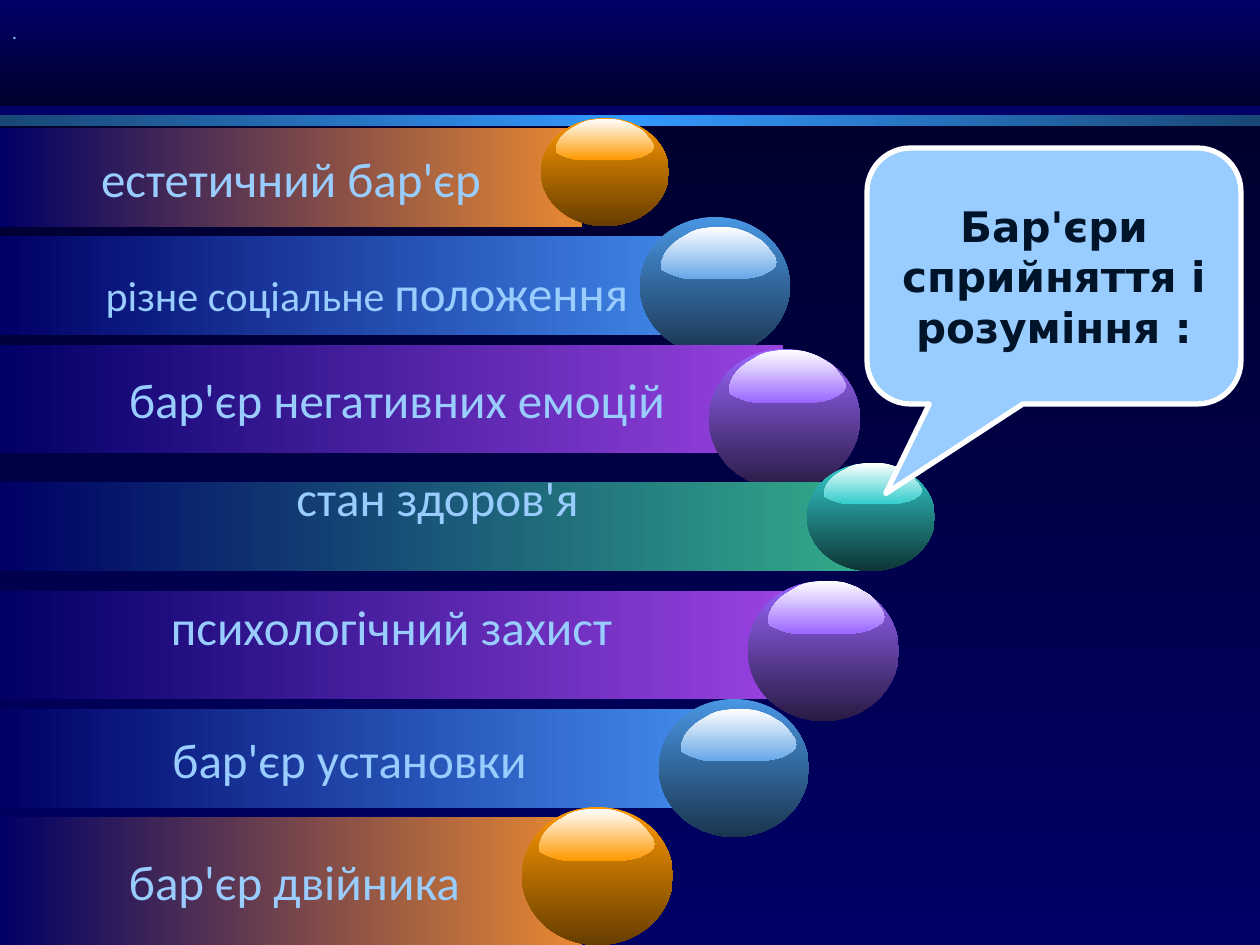
from copy import deepcopy

from pptx import Presentation
from pptx.dml.color import RGBColor
from pptx.enum.shapes import MSO_SHAPE
from pptx.enum.text import MSO_ANCHOR, PP_ALIGN
from pptx.oxml.ns import qn
from pptx.util import Pt

SCALE = 914400 / 126  # EMU in one px
WIDTH, HEIGHT = 1260, 945
INSET_X, INSET_Y = 12, 6

COLORS = {
    "navy": "000066", "night": "00002F", "line": "3399FF", "line_end": "184776",
    "text": "99CCFF", "bubble": "99CCFF", "bubble_text": "001429", "white": "FFFFFF",
}
# bar end, orb top, orb bottom, gloss bottom
THEMES = {
    "orange": ("E98931", "FF9900", "663D00", "FF9900"),
    "blue": ("418AEB", "4996E3", "1A3550", "66A7E8"),
    "purple": ("9942E0", "9966FF", "281A42", "9966FF"),
    "teal": ("33AD8A", "33CCCC", "0D3535", "33CCCC"),
}

# theme, label, bar (top, width, height), orb box, gloss box,
# extra insets (left, bottom) that move the label off the bar's centre
BARRIERS = [
    ("orange", "естетичний бар'єр", (128, 582, 99),
     (541, 118, 128, 108), (556, 119, 98, 41), (0, 0)),
    ("blue", None, (236, 699, 99),
     (640, 217, 150, 138), (661, 227, 116, 52), (0, 0)),
    ("purple", "бар'єр негативних емоцій", (345, 783, 108),
     (709, 349, 151, 140), (729, 350, 117, 53), (11, 0)),
    ("teal", "стан здоров'я", (482, 875, 89),
     (807, 463, 128, 108), (824, 463, 98, 41), (0, 60)),
    ("purple", "психологічний захист", (591, 783, 108),
     (748, 581, 151, 140), (768, 581, 117, 53), (0, 38)),
    ("blue", "бар'єр установки", (709, 699, 99),
     (659, 699, 150, 138), (681, 709, 116, 52), (0, 0)),
    ("orange", "бар'єр двійника", (817, 582, 128),
     (522, 807, 151, 138), (539, 809, 116, 52), (7, 0)),
]
SOCIAL_LABEL = [("різне соціальне ", 24), ("положення", 28)]
BUBBLE_LABEL = "Бар'єри сприйняття і розуміння :"

GLOSS_SIZE = (92, 41)
GLOSS_OUTLINE = [
    (90, 23), (92, 28), (90, 32), (86, 35), (80, 38), (72, 40), (62, 41), (33, 41),
    (24, 41), (16, 40), (10, 38), (5, 36), (1, 34), (0, 30), (1, 26), (3, 21),
    (6, 17), (10, 13), (14, 10), (19, 7), (24, 4), (29, 2), (34, 1), (40, 0),
    (46, 0), (53, 0), (59, 1), (65, 3), (70, 5), (75, 8), (80, 11), (84, 15), (87, 19),
]

RIGHTWARD, DOWNWARD = 0, 270


def px(value):
    return round(value * SCALE)


def rgb(value):
    return RGBColor.from_string(value)


def paint(shape, colors, angle):
    """Fill with evenly spaced gradient colours and no outline."""
    shape.shadow.inherit = False
    shape.line.fill.background()
    shape.fill.gradient()
    shape.fill.gradient_angle = angle
    stop_list = shape._element.spPr.find(".//" + qn("a:gsLst"))
    for _ in colors[2:]:
        stop_list.append(deepcopy(stop_list[0]))
    for index, (stop, color) in enumerate(zip(shape.fill.gradient_stops, colors)):
        stop.position = index / (len(colors) - 1)
        stop.color.rgb = rgb(color)


def add_gradient(slide, preset, box, colors, angle):
    shape = slide.shapes.add_shape(preset, *map(px, box))
    paint(shape, colors, angle)
    return shape


def add_gloss(slide, box, colors):
    left, top, width, height = box
    points = [(px(left + x * width / GLOSS_SIZE[0]), px(top + y * height / GLOSS_SIZE[1]))
              for x, y in GLOSS_OUTLINE]
    builder = slide.shapes.build_freeform(*points[0])
    builder.add_line_segments(points[1:], close=True)
    paint(builder.convert_to_shape(), colors, DOWNWARD)


def write(shape, runs, align, anchor, wrap=False, color="text", font="Calibri",
          bold=False, shift=(0, 0)):
    """Write one paragraph of (text, size) runs; shift adds to left and bottom insets."""
    frame = shape.text_frame
    frame.word_wrap = wrap
    frame.vertical_anchor = anchor
    frame.margin_left, frame.margin_right = px(INSET_X + shift[0]), px(INSET_X)
    frame.margin_top, frame.margin_bottom = px(INSET_Y), px(INSET_Y + shift[1])
    paragraph = frame.paragraphs[0]
    paragraph.alignment = align
    paragraph.font.name = font
    paragraph.font.bold = bold
    paragraph.font.color.rgb = rgb(COLORS[color])
    for text, size in runs:
        run = paragraph.add_run()
        run.text = text
        run.font.size = Pt(size)


def add_backdrop(slide):
    navy, night = COLORS["navy"], COLORS["night"]
    slide.background.fill.solid()
    slide.background.fill.fore_color.rgb = rgb(navy)
    line = [COLORS["line_end"], COLORS["line"], COLORS["line_end"]]
    for box, colors, angle in [
        ((0, 0, WIDTH, 106), [navy, night], DOWNWARD),
        ((0, 125, WIDTH, HEIGHT - 125), [night, navy], DOWNWARD),
        ((0, 115, WIDTH, 11), line, RIGHTWARD),
    ]:
        add_gradient(slide, MSO_SHAPE.RECTANGLE, box, colors, angle)


def add_barrier(slide, theme, label, bar_box, orb_box, gloss_box, shift):
    bar_end, orb_top, orb_bottom, gloss_bottom = THEMES[theme]
    top, width, height = bar_box
    bar = add_gradient(slide, MSO_SHAPE.RECTANGLE, (0, top, width, height),
                       [COLORS["navy"], bar_end], RIGHTWARD)
    if label:
        write(bar, [(label, 28)], PP_ALIGN.CENTER, MSO_ANCHOR.MIDDLE, shift=shift)
    add_gradient(slide, MSO_SHAPE.OVAL, orb_box, [orb_top, orb_bottom], DOWNWARD)
    add_gloss(slide, gloss_box, [COLORS["white"], gloss_bottom])


def add_bubble(slide):
    bubble = slide.shapes.add_shape(MSO_SHAPE.ROUNDED_RECTANGULAR_CALLOUT,
                                    *map(px, (867, 148, 374, 256)))
    for index, value in enumerate((-0.45, 0.85, 0.17)):
        bubble.adjustments[index] = value
    bubble.shadow.inherit = False
    bubble.fill.solid()
    bubble.fill.fore_color.rgb = rgb(COLORS["bubble"])
    bubble.line.color.rgb = rgb(COLORS["white"])
    bubble.line.width = Pt(3)
    write(bubble, [(BUBBLE_LABEL, 24)], PP_ALIGN.CENTER, MSO_ANCHOR.MIDDLE, wrap=True,
          color="bubble_text", font="DejaVu Sans", bold=True)


def main():
    deck = Presentation()
    deck.slide_width, deck.slide_height = px(WIDTH), px(HEIGHT)
    slide = deck.slides.add_slide(deck.slide_layouts[6])
    add_backdrop(slide)
    for barrier in BARRIERS[:2]:
        add_barrier(slide, *barrier)
    social = slide.shapes.add_textbox(*map(px, (0, 256, 640, 72)))
    write(social, SOCIAL_LABEL, PP_ALIGN.RIGHT, MSO_ANCHOR.TOP, wrap=True)
    for barrier in BARRIERS[2:4]:
        add_barrier(slide, *barrier)
    add_bubble(slide)
    dot = slide.shapes.add_textbox(*map(px, (0, 14, 30, 36)))
    write(dot, [(".", 11)], PP_ALIGN.LEFT, MSO_ANCHOR.MIDDLE)
    for barrier in BARRIERS[4:]:
        add_barrier(slide, *barrier)
    deck.save("out.pptx")


if __name__ == "__main__":
    main()
